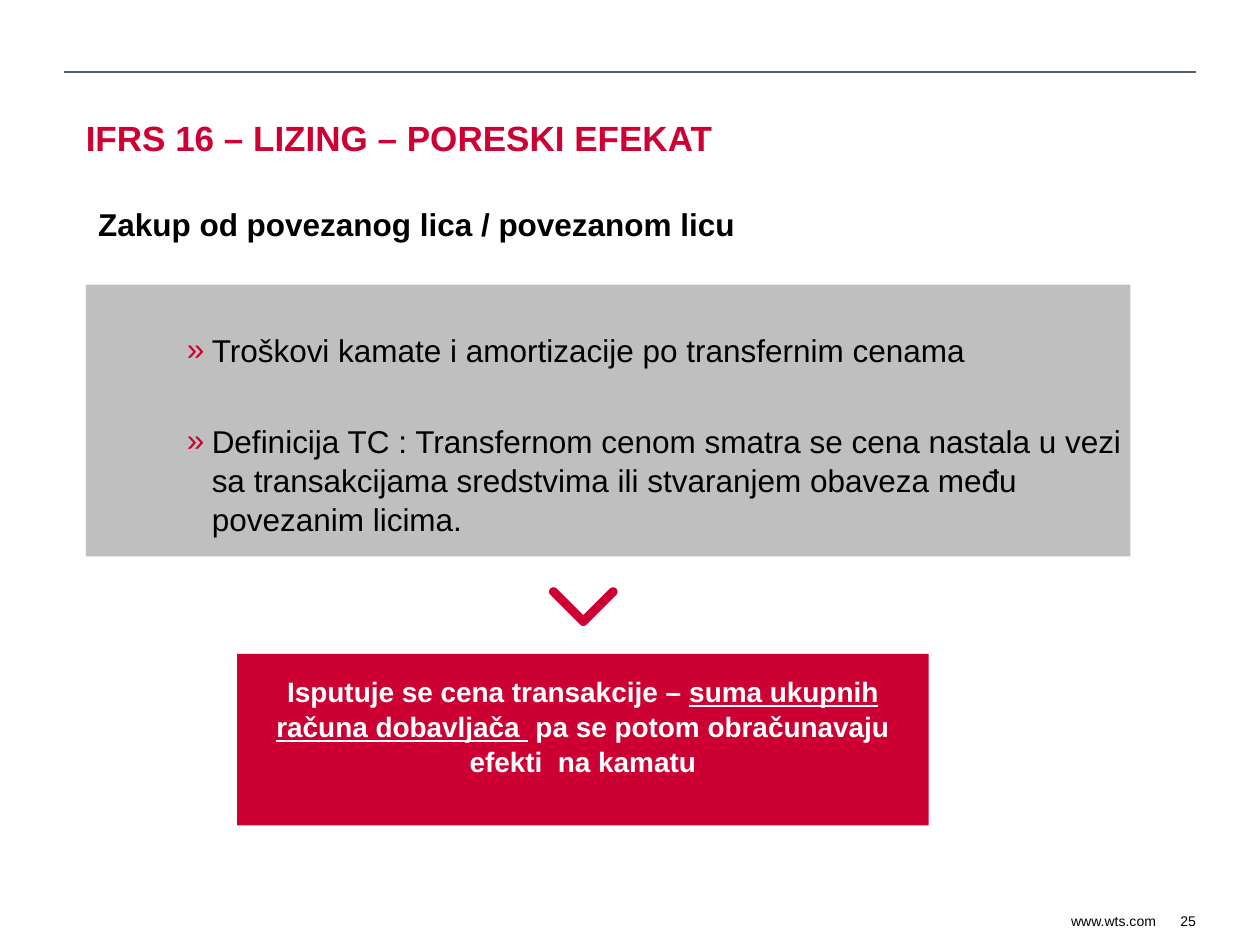
import math
from lxml import etree
from pptx import Presentation, util as u
from pptx.dml.color import RGBColor
from pptx.enum import shapes, text
from pptx.oxml import ns

RED = RGBColor(0xCC, 0x00, 0x33)
TITLE_RED = RGBColor(0xCE, 0x00, 0x33)
GREY = RGBColor(0xBF, 0xBF, 0xBF)
SLATE = RGBColor(0x51, 0x5D, 0x69)
BLACK = RGBColor(0x00, 0x00, 0x00)
WHITE = RGBColor(0xFF, 0xFF, 0xFF)


class Slide:
    """Holds the page and draws each kind of element in the house style."""
    font = "Arial"
    line_spacing = 1.04

    def __init__(self, page):
        self.page = page

    def rule(self, left, top, right):
        line = self.page.shapes.add_connector(
            shapes.MSO_CONNECTOR.STRAIGHT, u.Cm(left), u.Cm(top), u.Cm(right), u.Cm(top))
        line.line.color.rgb = SLATE
        line.line.width = u.Pt(0.75)
        etree.SubElement(line._element.spPr, ns.qn("a:effectLst"))

    def paint(self, shape, fill):
        shape.shadow.inherit = False
        shape.fill.solid()
        shape.fill.fore_color.rgb = fill
        shape.line.fill.background()

    def text_box(self, left, top, width, height, margins=(0, 0, 0, 0), wrap=True,
                 anchor=text.MSO_ANCHOR.TOP):
        box = self.page.shapes.add_textbox(u.Cm(left), u.Cm(top), u.Cm(width), u.Cm(height))
        return self.frame(box, margins, wrap, anchor)

    def panel(self, left, top, width, height, fill, margins):
        box = self.page.shapes.add_shape(
            shapes.MSO_SHAPE.RECTANGLE, u.Cm(left), u.Cm(top), u.Cm(width), u.Cm(height))
        self.paint(box, fill)
        return self.frame(box, margins, True, text.MSO_ANCHOR.TOP)

    def frame(self, box, margins, wrap, anchor):
        frame = box.text_frame
        frame.word_wrap = wrap
        frame.vertical_anchor = anchor
        (frame.margin_left, frame.margin_top,
         frame.margin_right, frame.margin_bottom) = [u.Cm(m) for m in margins]
        return frame

    def add_spans(self, para, spans, size, color, bold=False, align=text.PP_ALIGN.LEFT):
        """Each span is a pair of wording and underline."""
        para.alignment = align
        para.line_spacing = self.line_spacing
        for wording, underline in spans:
            span = para.add_run()
            span.text = wording
            span.font.name = self.font
            span.font.size = u.Pt(size)
            span.font.color.rgb = color
            span.font.bold = bold
            span.font.underline = underline

    def bullets(self, frame, items, size, gap):
        for number, item in enumerate(items):
            para = frame.add_paragraph() if number else frame.paragraphs[0]
            props = para._p.get_or_add_pPr()
            props.set("marL", str(u.Cm(2.54)))
            props.set("indent", str(u.Cm(-0.5)))
            color = etree.SubElement(props, ns.qn("a:buClr"))
            etree.SubElement(color, ns.qn("a:srgbClr"), val=str(RED))
            etree.SubElement(props, ns.qn("a:buFont"), typeface=self.font)
            etree.SubElement(props, ns.qn("a:buChar"), char="»")
            if number:
                para.space_before = u.Pt(gap)
            self.add_spans(para, [(item, False)], size, BLACK)

    def chevron(self, center, top, reach, radius, fill):
        """A downward V with round ends; reach is the run of each arm."""
        tip = top + reach
        arcs = [(center - reach, top, -45, -225), (center, tip, 135, 45),
                (center + reach, top, 45, -135)]
        points = [(center, tip - radius * math.sqrt(2))]
        for x, y, start, end in arcs:
            step = -15 if end < start else 15
            for degrees in range(start, end + step, step):
                angle = math.radians(degrees)
                points.append((x + radius * math.cos(angle), y + radius * math.sin(angle)))
        points = [(u.Cm(x), u.Cm(y)) for x, y in points]
        builder = self.page.shapes.build_freeform(*points[0])
        builder.add_line_segments(points[1:], close=True)
        self.paint(builder.convert_to_shape(), fill)


def main():
    deck = Presentation()
    deck.slide_width, deck.slide_height = u.Cm(25.4), u.Cm(19.05)
    slide = Slide(deck.slides.add_slide(deck.slide_layouts[6]))

    # Header rule and footer
    slide.rule(1.3, 1.45, 24.1)
    for wording, left, width in [("25", 23.55, 0.56), ("www.wts.com", 21.56, 1.75)]:
        frame = slide.text_box(left, 18.39, width, 0.35, wrap=False,
                               anchor=text.MSO_ANCHOR.MIDDLE)
        slide.add_spans(frame.paragraphs[0], [(wording, False)], 8, BLACK,
                        align=text.PP_ALIGN.RIGHT)

    # Title and subtitle
    frame = slide.text_box(1.73, 2.26, 22.8, 1.7, margins=(0, 0.06, 0, 0))
    slide.add_spans(frame.paragraphs[0], [("IFRS 16 – LIZING – PORESKI EFEKAT", False)],
                    20, TITLE_RED, bold=True)
    frame = slide.text_box(1.73, 3.97, 16.4, 1.02, margins=(0.25, 0.13, 0.25, 0.13))
    slide.add_spans(frame.paragraphs[0], [("Zakup od povezanog lica / povezanom licu", False)],
                    18, BLACK, bold=True)

    # Grey panel with bullets
    frame = slide.panel(1.73, 5.74, 21.06, 5.48, GREY, margins=(0, 0.9, 0, 0))
    slide.bullets(frame, [
        "Troškovi kamate i amortizacije po transfernim cenama",
        "Definicija TC : Transfernom cenom smatra se cena nastala u vezi sa transakcijama "
        "sredstvima ili stvaranjem obaveza među povezanim licima.",
    ], size=18, gap=29.4)

    # Chevron leading to the conclusion
    slide.chevron(center=11.76, top=11.93, reach=0.6, radius=0.09, fill=RED)
    frame = slide.panel(4.78, 13.18, 13.94, 3.46, RED, margins=(0.25, 0.4, 0.25, 0.13))
    slide.add_spans(frame.paragraphs[0], [
        ("Isputuje se cena transakcije – ", False),
        ("suma ukupnih računa dobavljača ", True),
        (" pa se potom obračunavaju efekti  na kamatu", False),
    ], 16, WHITE, bold=True, align=text.PP_ALIGN.CENTER)

    deck.save("out.pptx")


if __name__ == "__main__":
    main()
